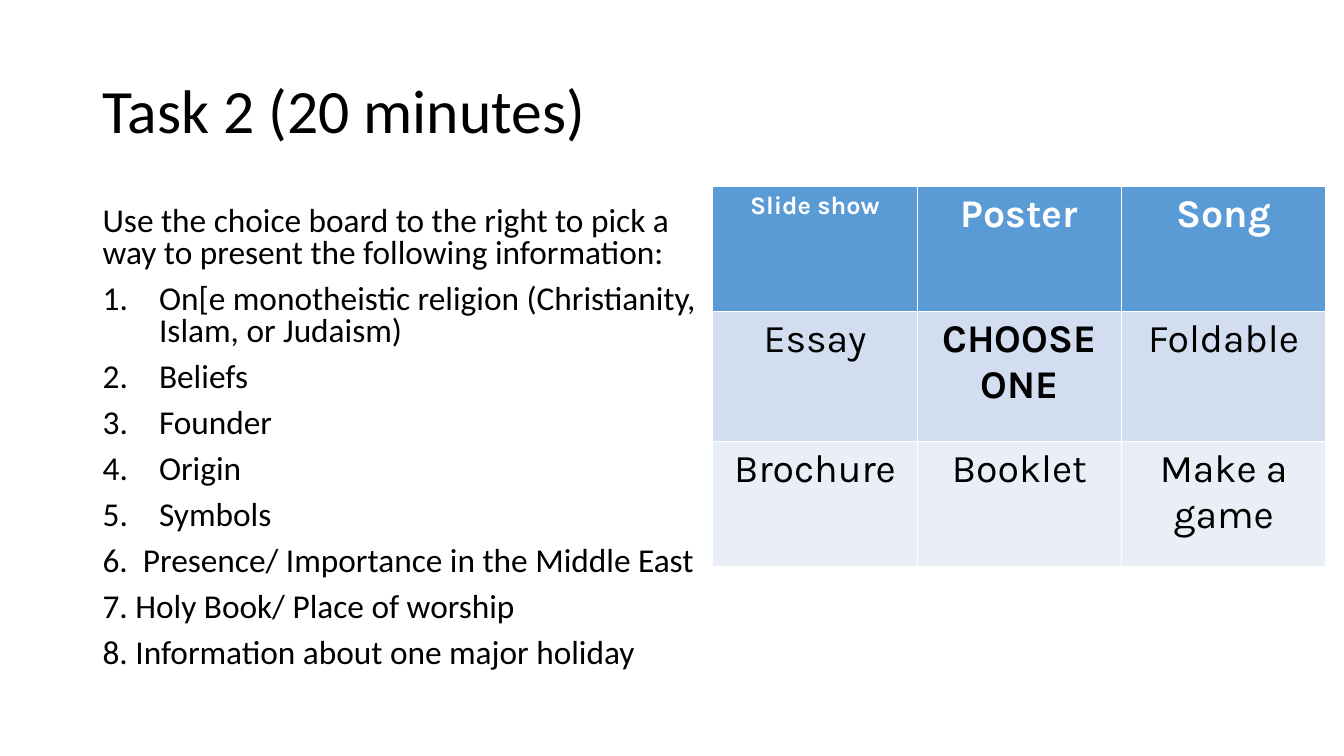
"""Build the Task 2 slide: an assignment list beside a choice board."""
from dataclasses import dataclass
from typing import Optional

from lxml.etree import SubElement
from pptx import Presentation
from pptx.dml.color import RGBColor as Rgb
from pptx.enum.text import MSO_ANCHOR as Anchor, PP_ALIGN as Align
from pptx.oxml.ns import qn
from pptx.util import Emu, Pt

SCALE = 9144


@dataclass(frozen=True)
class Theme:
    ink: str = "000000"
    white: str = "FFFFFF"
    head: str = "5B9BD5"
    bands: tuple[str, ...] = ("D2DEEF", "EAEFF7")
    sans: str = "Calibri"
    board: str = "Karla"
    title: float = 44
    body: float = 23.8
    cell: float = 28
    small: float = 18


@dataclass(frozen=True)
class Box:
    left: int
    top: int
    width: int
    height: int


@dataclass(frozen=True)
class Line:
    text: str
    listed: bool = False


@dataclass(frozen=True)
class Choice:
    text: str
    bold: bool = False
    size: Optional[float] = None


THEME = Theme()
INDENT = 56
TITLE = Line("Task 2 (20 minutes)")
TASKS = [
    Line("Use the choice board to the right to pick a way to present the following information:"),
    Line("On[e monotheistic religion (Christianity, Islam, or Judaism)", True),
    Line("Beliefs", True),
    Line("Founder", True),
    Line("Origin", True),
    Line("Symbols", True),
    Line("6.  Presence/ Importance in the Middle East"),
    Line("7. Holy Book/ Place of worship"),
    Line("8. Information about one major holiday"),
]
BOARD = [
    [Choice("Slide show", True, THEME.small), Choice("Poster", True), Choice("Song", True)],
    [Choice("Essay"), Choice("CHOOSE ONE", True), Choice("Foldable")],
    [Choice("Brochure"), Choice("Booklet"), Choice("Make a game")],
]
ROWS = [124, 129, 124]


def px(count: int) -> Emu:
    """Turn whole pixels into EMU."""
    return Emu(count * SCALE)


def place(box: Box) -> tuple[Emu, Emu, Emu, Emu]:
    """Give a box as EMU lengths."""
    return px(box.left), px(box.top), px(box.width), px(box.height)


def style(para, face: str, size: float, color: str, bold: bool = False) -> None:
    """Set the font of a whole paragraph."""
    font = para.font
    font.name, font.size, font.bold = face, Pt(size), bold
    font.color.rgb = Rgb.from_string(color)


def number(para) -> None:
    """Give a paragraph a hanging automatic number."""
    props = para._p.get_or_add_pPr()
    props.set("marL", str(px(INDENT)))
    props.set("indent", str(-px(INDENT)))
    SubElement(props, qn("a:buFont"), typeface="+mj-lt")
    SubElement(props, qn("a:buAutoNum"), type="arabicPeriod")


def write(slide, box: Box, lines: list[Line], size: float, pitch: float,
          gap: float = 0, anchor: Anchor = Anchor.TOP) -> None:
    """Add a text box with one paragraph for each line."""
    frame = slide.shapes.add_textbox(*place(box)).text_frame
    frame.word_wrap, frame.vertical_anchor = True, anchor
    for i, line in enumerate(lines):
        para = frame.add_paragraph() if i else frame.paragraphs[0]
        para.text = line.text
        para.line_spacing, para.space_before = pitch, Pt(gap)
        if line.listed:
            number(para)
        style(para, THEME.sans, size, THEME.ink)


def grid(slide, box: Box) -> None:
    """Add the choice board as a table."""
    table = slide.shapes.add_table(len(BOARD), len(BOARD[0]), *place(box)).table
    fills = (THEME.head, *THEME.bands)
    for r, (row, high, fill) in enumerate(zip(BOARD, ROWS, fills)):
        table.rows[r].height = px(high)
        for c, choice in enumerate(row):
            cell = table.cell(r, c)
            cell.fill.solid()
            cell.fill.fore_color.rgb = Rgb.from_string(fill)
            cell.text = choice.text
            para = cell.text_frame.paragraphs[0]
            para.alignment = Align.CENTER
            color = THEME.ink if r else THEME.white
            style(para, THEME.board, choice.size or THEME.cell, color, choice.bold)


def main() -> None:
    """Draw the slide and save it."""
    deck = Presentation()
    deck.slide_width, deck.slide_height = px(1333), px(750)
    slide = deck.slides.add_slide(deck.slide_layouts[6])
    write(slide, Box(92, 40, 1150, 145), [TITLE], THEME.title, 0.9, anchor=Anchor.MIDDLE)
    write(slide, Box(92, 200, 634, 476), TASKS, THEME.body, 0.8, gap=10)
    grid(slide, Box(707, 185, 608, sum(ROWS)))
    deck.save("out.pptx")


if __name__ == "__main__":
    main()
